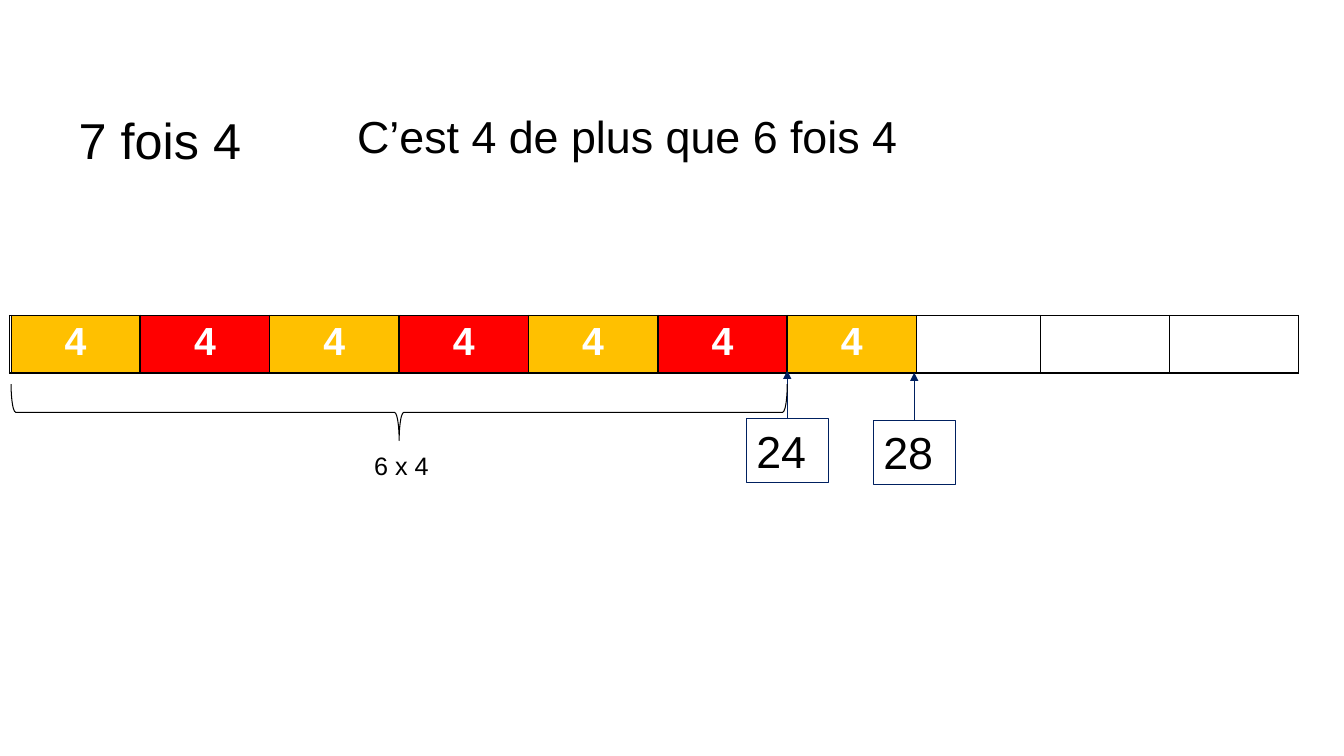
from lxml import etree
from pptx import Presentation
from pptx import util as u
from pptx.dml.color import RGBColor
from pptx.enum import shapes, text
from pptx.oxml import ns

BLACK = RGBColor(0x00, 0x00, 0x00)
WHITE = RGBColor(0xFF, 0xFF, 0xFF)
NAVY = RGBColor(0x00, 0x20, 0x60)
RED = RGBColor(0xFF, 0x00, 0x00)
AMBER = RGBColor(0xFF, 0xC0, 0x00)
FONT = "Arial"
CELL_H = 1.45


def cm_box(*lengths):
    """Convert centimetre numbers to lengths."""
    return [u.Cm(n) for n in lengths]


def write(tf, words, size, color=BLACK, bold=False, align=text.PP_ALIGN.LEFT):
    """Write one run into a text frame."""
    p = tf.paragraphs[0]
    p.alignment = align
    r = p.add_run()
    r.text = words
    r.font.name = FONT
    r.font.size = u.Pt(size)
    r.font.bold = bold
    r.font.color.rgb = color


def add_label(s, box, words, size):
    """Add a plain text box."""
    tf = s.shapes.add_textbox(*cm_box(*box)).text_frame
    tf.word_wrap = True
    write(tf, words, size)


def add_heading(s, box, words, remark):
    """Place the title and the remark to its right."""
    left, top, width, height = box
    title = s.shapes.title
    title.left, title.top, title.width, title.height = cm_box(left, top, 7.14, height)
    tf = title.text_frame
    tf.vertical_anchor = text.MSO_ANCHOR.TOP
    tf.auto_size = text.MSO_AUTO_SIZE.NONE
    write(tf, words, 36)
    add_label(s, (left + 7.02, top, width - 7.02, 1.63), remark, 32)


def set_borders(cell):
    """Give a cell a thin black border on every side."""
    tc_pr = cell._tc.get_or_add_tcPr()
    for side in ("lnL", "lnR", "lnT", "lnB"):
        ln = etree.SubElement(tc_pr, ns.qn(f"a:{side}"), w=str(u.Pt(1)))
        fill = etree.SubElement(ln, ns.qn("a:solidFill"))
        etree.SubElement(fill, ns.qn("a:srgbClr"), val=str(BLACK))


def add_strip(s, left, top, widths):
    """Add a one-row table of empty bordered cells and return it."""
    frame = s.shapes.add_table(1, len(widths), *cm_box(left, top, sum(widths), CELL_H))
    table = frame.table
    table.first_row = table.horz_banding = False
    for column, width, cell in zip(table.columns, widths, table.rows[0].cells):
        column.width = u.Cm(width)
        set_borders(cell)
        cell.fill.background()
    return table


def add_bar(s, left, top, count):
    """Lay alternating number tiles over a ten-cell strip."""
    add_strip(s, left, top, [3.3, 3.3, 3.25, 3.25, 3.25, 3.28, 3.1, 3.25, 3.25, 3.25])
    for i in range(count):
        cell = add_strip(s, left + 0.04 + 3.26 * i, top, [3.25]).cell(0, 0)
        cell.fill.solid()
        cell.fill.fore_color.rgb = RED if i % 2 else AMBER
        write(cell.text_frame, "4", 28, WHITE, True, text.PP_ALIGN.CENTER)


def add_callout(s, center, top, words):
    """Group a framed number with an arrow rising from it."""
    group = s.shapes.add_group_shape()
    sp = group.shapes.add_shape(
        shapes.MSO_SHAPE.RECTANGLE, *cm_box(center - 1.03, top, 2.06, 1.63))
    sp.shadow.inherit = False
    sp.fill.background()
    arrow = group.shapes.add_connector(
        shapes.MSO_CONNECTOR.STRAIGHT, *cm_box(center, top, center, top - 1.2))
    for shape in (sp, arrow):
        shape.line.color.rgb = NAVY
        shape.line.width = u.Pt(0.75)
    etree.SubElement(arrow.line._get_or_add_ln(), ns.qn("a:tailEnd"), type="triangle")
    etree.SubElement(arrow._element.spPr, ns.qn("a:effectLst"))
    tf = sp.text_frame
    tf.vertical_anchor = text.MSO_ANCHOR.TOP
    write(tf, words, 32)


def add_brace(s, box, words):
    """Add a brace opening upwards with its label below."""
    left, top, width, height = box
    center = left + width / 2
    sp = s.shapes.add_shape(
        shapes.MSO_SHAPE.LEFT_BRACE,
        *cm_box(center - height / 2, top + (height - width) / 2, height, width))
    sp.rotation = 270
    sp.shadow.inherit = False
    sp.fill.background()
    sp.line.color.rgb = BLACK
    sp.line.width = u.Pt(0.75)
    add_label(s, (center - 0.88, top + height + 0.13, 2.46, 1.02), words, 18)


def main():
    """Build the multiplication slide."""
    prs = Presentation()
    prs.slide_width, prs.slide_height = cm_box(33.87, 19.05)
    s = prs.slides.add_slide(prs.slide_layouts[5])
    add_heading(s, (1.73, 2.62, 23.28, 1.8), "7 fois 4", "C’est 4 de plus que 6 fois 4")
    add_bar(s, 0.24, 7.95, 7)
    add_callout(s, 19.84, 10.54, "24")
    add_callout(s, 23.04, 10.59, "28")
    add_brace(s, (0.28, 9.68, 19.56, 1.42), "6 x 4")
    prs.save("out.pptx")


if __name__ == "__main__":
    main()
